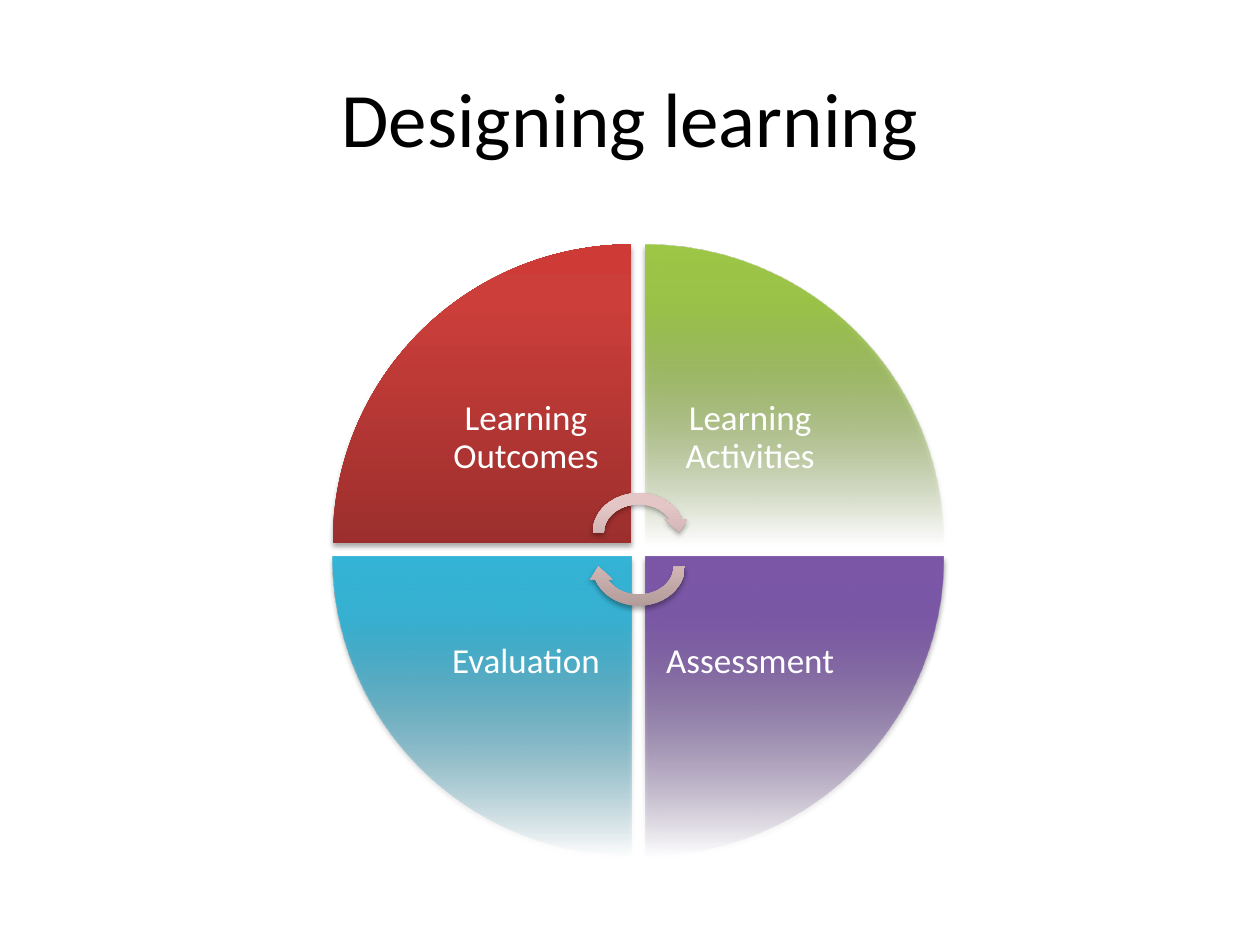
import pptx
import pptx.util
import pptx.oxml
import pptx.oxml.ns
import pptx.dml.color
import pptx.enum.shapes
import pptx.enum.text
from lxml import etree

Pt = pptx.util.Pt
SHAPES = pptx.enum.shapes.MSO_SHAPE
FONT = "Calibri"
COLORS = {
    "title": "000000",
    "label": "FFFFFF",
    "shadow": "000000",
    "red": ("9C2F2D", "CB3E3A", "CE3B37"),
    "green": ("779737", "9BC348", "9DC746"),
    "purple": ("5F4480", "7B58A6", "7C57A8"),
    "blue": ("2A88A2", "37B1D2", "34B4D6"),
    "pink": ("B09998", "E5C6C6", "E6C7C6"),
}
STOPS = (0, 80, 100)
WEDGE_SIZE = 170.6
WEDGE_PITCH = 178.5
WHEEL_LEFT, WHEEL_TOP = 190.1, 139.7
LABEL_SIZE = 120.2
LABEL_INSET = 11.2
ARROW_LEFT, ARROW_WIDTH, ARROW_HEIGHT = 335.5, 59, 51.2
QUADRANTS = [
    ("Learning Outcomes", "red", 0, 0, 0, False),
    ("Learning Activities", "green", 1, 0, 90, True),
    ("Assessment", "purple", 1, 1, 180, True),
    ("Evaluation", "blue", 0, 1, 270, True),
]
ARROWS = [(278.6, 0), (298.1, 180)]


def add_child(parent, tag, **attributes):
    child = etree.SubElement(parent, pptx.oxml.ns.qn(tag))
    for name, value in attributes.items():
        child.set(name, str(value))
    return child


def apply_gradient(shape, colors, fades):
    shape.fill.gradient()
    gradient = shape.element.spPr.find(pptx.oxml.ns.qn("a:gradFill"))
    for child in list(gradient):
        gradient.remove(child)
    gradient.set("rotWithShape", "0")
    stops = add_child(gradient, "a:gsLst")
    for position, color in zip(STOPS, colors):
        stop = add_child(stops, "a:gs", pos=position * 1000)
        fill = add_child(stop, "a:srgbClr", val=color)
        if fades and position == 0:
            add_child(fill, "a:alpha", val=0)
    add_child(gradient, "a:lin", ang=270 * 60000, scaled=0)


def apply_shadow(shape):
    shape.shadow.inherit = False
    effects = shape.element.spPr.find(pptx.oxml.ns.qn("a:effectLst"))
    shadow = add_child(effects, "a:outerShdw", blurRad=Pt(3.1), dist=Pt(1.8),
                       dir=90 * 60000, rotWithShape=0)
    color = add_child(shadow, "a:srgbClr", val=COLORS["shadow"])
    add_child(color, "a:alpha", val=35000)


def add_gradient_shape(slide, kind, box, rotation, color, fades=False):
    shape = slide.shapes.add_shape(kind, *map(Pt, box))
    shape.rotation = rotation
    apply_gradient(shape, COLORS[color], fades)
    shape.line.fill.background()
    apply_shadow(shape)


def format_text(frame, text, size, color):
    frame.text = text
    frame.word_wrap = True
    frame.auto_size = pptx.enum.text.MSO_AUTO_SIZE.NONE
    frame.vertical_anchor = pptx.enum.text.MSO_ANCHOR.MIDDLE
    paragraph = frame.paragraphs[0]
    paragraph.alignment = pptx.enum.text.PP_ALIGN.CENTER
    paragraph.font.name = FONT
    paragraph.font.size = Pt(size)
    paragraph.font.color.rgb = pptx.dml.color.RGBColor.from_string(COLORS[color])
    return paragraph


def add_title(slide, text):
    title = slide.shapes.title
    title.left, title.top, title.width, title.height = map(Pt, (36, 21.6, 648, 90))
    format_text(title.text_frame, text, 44, "title")


def add_label(slide, text, left, top):
    label = slide.shapes.add_textbox(Pt(left), Pt(top), Pt(LABEL_SIZE), Pt(LABEL_SIZE))
    frame = label.text_frame
    frame.margin_left = frame.margin_right = Pt(LABEL_INSET)
    frame.margin_top = frame.margin_bottom = Pt(LABEL_INSET)
    format_text(frame, text, 20, "label").line_spacing = 0.9


def add_quadrant(slide, text, color, column, row, rotation, fades):
    left = WHEEL_LEFT + column * WEDGE_PITCH
    top = WHEEL_TOP + row * WEDGE_PITCH
    add_gradient_shape(slide, SHAPES.PIE_WEDGE, (left, top, WEDGE_SIZE, WEDGE_SIZE),
                       rotation, color, fades)
    inward = WEDGE_SIZE - LABEL_SIZE
    add_label(slide, text, left + (1 - column) * inward, top + (1 - row) * inward)


def main():
    presentation = pptx.Presentation()
    presentation.slide_width, presentation.slide_height = Pt(720), Pt(540)
    slide = presentation.slides.add_slide(presentation.slide_layouts.get_by_name("Title Only"))
    add_title(slide, "Designing learning")
    for quadrant in QUADRANTS:
        add_quadrant(slide, *quadrant)
    for top, rotation in ARROWS:
        add_gradient_shape(slide, SHAPES.CIRCULAR_ARROW,
                           (ARROW_LEFT, top, ARROW_WIDTH, ARROW_HEIGHT), rotation, "pink")
    presentation.save("out.pptx")


if __name__ == "__main__":
    main()
